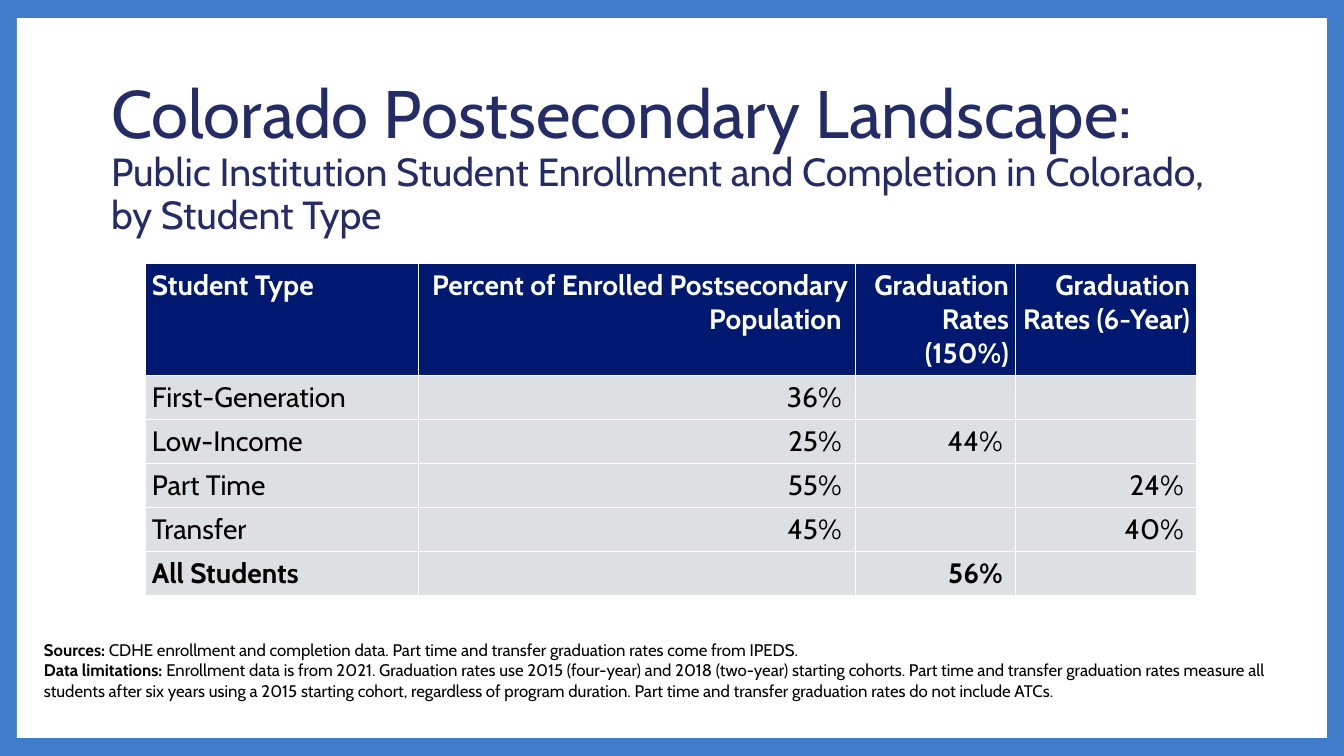
from dataclasses import dataclass

from lxml.etree import SubElement
from pptx import Presentation
from pptx.dml.color import RGBColor
from pptx.enum.shapes import MSO_SHAPE
from pptx.enum.text import MSO_ANCHOR, MSO_AUTO_SIZE, PP_ALIGN
from pptx.oxml.ns import qn
from pptx.util import Emu, Pt

EMU_PER_PX = 914400 / 100.8
FONT = "Cabin"
BLUE = RGBColor(0x40, 0x7C, 0xCA)
INDIGO = RGBColor(0x23, 0x2C, 0x67)
NAVY = RGBColor(0x00, 0x19, 0x70)
GRAY = RGBColor(0xDD, 0xE0, 0xE3)
WHITE = RGBColor(0xFF, 0xFF, 0xFF)
BLACK = RGBColor(0x00, 0x00, 0x00)
HEADER_HEIGHT, ROW_HEIGHT = 110, 44


@dataclass
class Column:
    heading: str
    width: int
    align: PP_ALIGN = PP_ALIGN.RIGHT


@dataclass
class Row:
    values: tuple[str, ...]
    bold: bool = False


@dataclass
class Note:
    label: str
    text: str


COLUMNS = [
    Column("Student Type ", 273, PP_ALIGN.LEFT),
    Column("Percent of Enrolled Postsecondary Population ", 437),
    Column("Graduation Rates (150%)", 161),
    Column("Graduation Rates (6-Year)", 181),
]
ROWS = [
    Row(("First-Generation ", "36% ", "", "")),
    Row(("Low-Income ", "25% ", "44% ", "")),
    Row(("Part Time ", "55% ", "", "24% ")),
    Row(("Transfer ", "45% ", "", "40% ")),
    Row(("All Students ", "", "56% ", ""), bold=True),
]
NOTES = [
    Note("Sources: ", "CDHE enrollment and completion data. Part time and transfer "
         "graduation rates come from IPEDS."),
    Note("Data limitations: ", "Enrollment data is from 2021. Graduation rates use 2015 "
         "(four-year) and 2018 (two-year) starting cohorts. Part time and transfer "
         "graduation rates measure all students after six years using a 2015 starting "
         "cohort, regardless of program duration. Part time and transfer graduation "
         "rates do not include ATCs."),
]


def px(value: int) -> Emu:
    return Emu(round(value * EMU_PER_PX))


def box(*values: int) -> list[Emu]:
    return [px(value) for value in values]


def add_text(p, text: str, *, size: int, color: RGBColor, bold: bool = False) -> None:
    r = p.add_run()
    r.text = text
    r.font.name = FONT
    r.font.size = Pt(size)
    r.font.bold = bold
    r.font.color.rgb = color


def add_frame(slide) -> None:
    sp = slide.shapes.add_shape(MSO_SHAPE.RECTANGLE, *box(17, 18, 1310, 720))
    sp.shadow.inherit = False
    sp.fill.solid()
    sp.fill.fore_color.rgb = WHITE
    sp.line.fill.background()
    slide.shapes.title.element.addprevious(sp.element)


def add_title(slide) -> None:
    sp = slide.shapes.title
    sp.left, sp.top, sp.width, sp.height = box(101, 75, 1143, 168)
    tf = sp.text_frame
    tf.auto_size = MSO_AUTO_SIZE.NONE
    tf.vertical_anchor = MSO_ANCHOR.MIDDLE
    p = tf.paragraphs[0]
    p.alignment = PP_ALIGN.LEFT
    p.line_spacing = 0.9
    add_text(p, "Colorado Postsecondary Landscape:", size=48, color=INDIGO)
    p.add_line_break()
    add_text(p, "Public Institution Student Enrollment and Completion in Colorado, "
             "by Student Type", size=28, color=INDIGO)


def add_borders(cell) -> None:
    tc_pr = cell._tc.get_or_add_tcPr()
    for index, side in enumerate(("lnL", "lnR", "lnT", "lnB")):
        ln = SubElement(tc_pr, qn(f"a:{side}"), w=str(Pt(0.75)))
        fill = SubElement(ln, qn("a:solidFill"))
        SubElement(fill, qn("a:srgbClr"), val=str(WHITE))
        tc_pr.insert(index, ln)


def fill_cell(cell, text: str, *, align: PP_ALIGN, fill: RGBColor, color: RGBColor,
              bold: bool, anchor: MSO_ANCHOR) -> None:
    cell.fill.solid()
    cell.fill.fore_color.rgb = fill
    cell.margin_left = cell.margin_right = px(7)
    cell.margin_top = cell.margin_bottom = px(5)
    cell.vertical_anchor = anchor
    add_borders(cell)
    if text:
        p = cell.text_frame.paragraphs[0]
        p.alignment = align
        add_text(p, text, size=20, color=color, bold=bold)


def add_rates_table(slide) -> None:
    width = sum(column.width for column in COLUMNS)
    height = HEADER_HEIGHT + ROW_HEIGHT * len(ROWS)
    table = slide.shapes.add_table(len(ROWS) + 1, len(COLUMNS),
                                   *box(145, 263, width, height)).table
    for row in table.rows:
        row.height = px(ROW_HEIGHT)
    table.rows[0].height = px(HEADER_HEIGHT)
    for j, column in enumerate(COLUMNS):
        table.columns[j].width = px(column.width)
        fill_cell(table.cell(0, j), column.heading, align=column.align, fill=NAVY,
                  color=WHITE, bold=True, anchor=MSO_ANCHOR.TOP)
        for i, row in enumerate(ROWS, start=1):
            fill_cell(table.cell(i, j), row.values[j], align=column.align, fill=GRAY,
                      color=BLACK, bold=row.bold, anchor=MSO_ANCHOR.BOTTOM)


def add_notes(slide) -> None:
    tf = slide.shapes.add_textbox(*box(34, 635, 1277, 72)).text_frame
    tf.word_wrap = True
    for i, note in enumerate(NOTES):
        p = tf.add_paragraph() if i else tf.paragraphs[0]
        add_text(p, note.label, size=12, color=BLACK, bold=True)
        add_text(p, note.text, size=12, color=BLACK)


def main() -> None:
    prs = Presentation()
    prs.slide_width, prs.slide_height = box(1344, 756)
    slide = prs.slides.add_slide(prs.slide_layouts[5])
    slide.background.fill.solid()
    slide.background.fill.fore_color.rgb = BLUE
    add_frame(slide)
    add_title(slide)
    add_rates_table(slide)
    add_notes(slide)
    prs.save("out.pptx")


if __name__ == "__main__":
    main()
